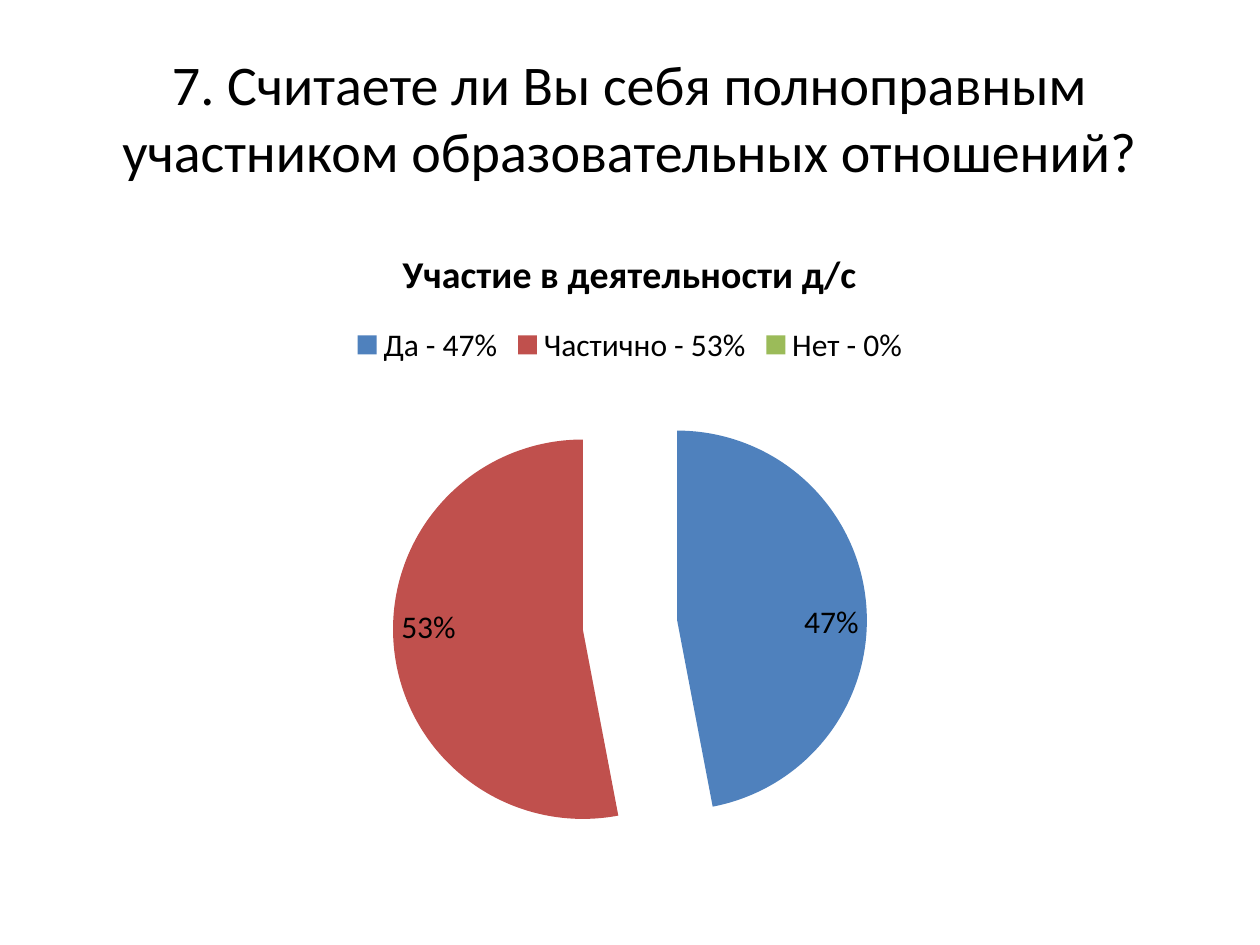
"""Build the survey slide about taking part in kindergarten activities."""
from lxml import etree
from pptx import Presentation
from pptx.chart.data import CategoryChartData
from pptx.dml.color import RGBColor
from pptx.enum.chart import XL_CHART_TYPE, XL_LABEL_POSITION, XL_LEGEND_POSITION
from pptx.enum.text import MSO_ANCHOR, PP_ALIGN
from pptx.oxml.ns import qn
from pptx.util import Pt

PIE = XL_CHART_TYPE.PIE
LEGEND_TOP = XL_LEGEND_POSITION.TOP
INSIDE_END = XL_LABEL_POSITION.INSIDE_END
MIDDLE = MSO_ANCHOR.MIDDLE
CENTER = PP_ALIGN.CENTER
TITLE_ONLY = 5
CHART_HEADING = "Участие в деятельности д/с"
ANSWERS = [("Да - 47%", 47, "4F81BD"), ("Частично - 53%", 53, "C0504D"), ("Нет - 0%", 0, "9BBB59")]


def style_font(font, size, bold=False):
    font.name = "Calibri"
    font.size = Pt(size)
    font.bold = bold
    font.color.rgb = color("000000")


def color(value):
    return RGBColor.from_string(value)


prs = Presentation()
prs.slide_width, prs.slide_height = Pt(720), Pt(540)
slide = prs.slides.add_slide(prs.slide_layouts[TITLE_ONLY])

question = slide.shapes.title
question.left, question.top, question.width, question.height = Pt(36), Pt(21.6), Pt(648), Pt(90)
question.text_frame.vertical_anchor = MIDDLE
question_line = question.text_frame.paragraphs[0]
question_line.alignment = CENTER
question_run = question_line.add_run()
question_run.text = "7. Считаете ли Вы себя полноправным участником образовательных отношений?"
style_font(question_run.font, 32)

survey = CategoryChartData()
survey.categories = [answer for answer, share, fill in ANSWERS]
survey.add_series(CHART_HEADING, [share for answer, share, fill in ANSWERS])
pie = slide.shapes.add_chart(PIE, Pt(36), Pt(126), Pt(648), Pt(376.5), survey).chart
style_font(pie.font, 18)

pie.has_title = True
heading_run = pie.chart_title.text_frame.paragraphs[0].add_run()
heading_run.text = CHART_HEADING
style_font(heading_run.font, 21.6, bold=True)
pie.chart_title.include_in_layout = False

pie.has_legend = True
pie.legend.position = LEGEND_TOP
pie.legend.include_in_layout = False
style_font(pie.legend.font, 18)

pie.plots[0].vary_by_categories = True
shares = pie.plots[0].series[0]
for index, (answer, share, fill) in enumerate(ANSWERS):
    slice_fill = shares.points[index].format.fill
    slice_fill.solid()
    slice_fill.fore_color.rgb = color(fill)

labels = shares.data_labels
labels.show_value = False
labels.show_percentage = True
labels.number_format = "0%"
labels.number_format_is_linked = False
labels.position = INSIDE_END
style_font(labels.font, 18)

series_xml = shares.points[0].format.fill and pie.plots[0].series[0]._element
explosion = etree.Element(qn("c:explosion"), val="25")
series_xml.find(qn("c:dPt")).addprevious(explosion)
zero_label = etree.Element(qn("c:dLbl"))
etree.SubElement(zero_label, qn("c:idx"), val="2")
etree.SubElement(zero_label, qn("c:delete"), val="1")
series_xml.find(qn("c:dLbls")).insert(0, zero_label)

prs.save("out.pptx")
